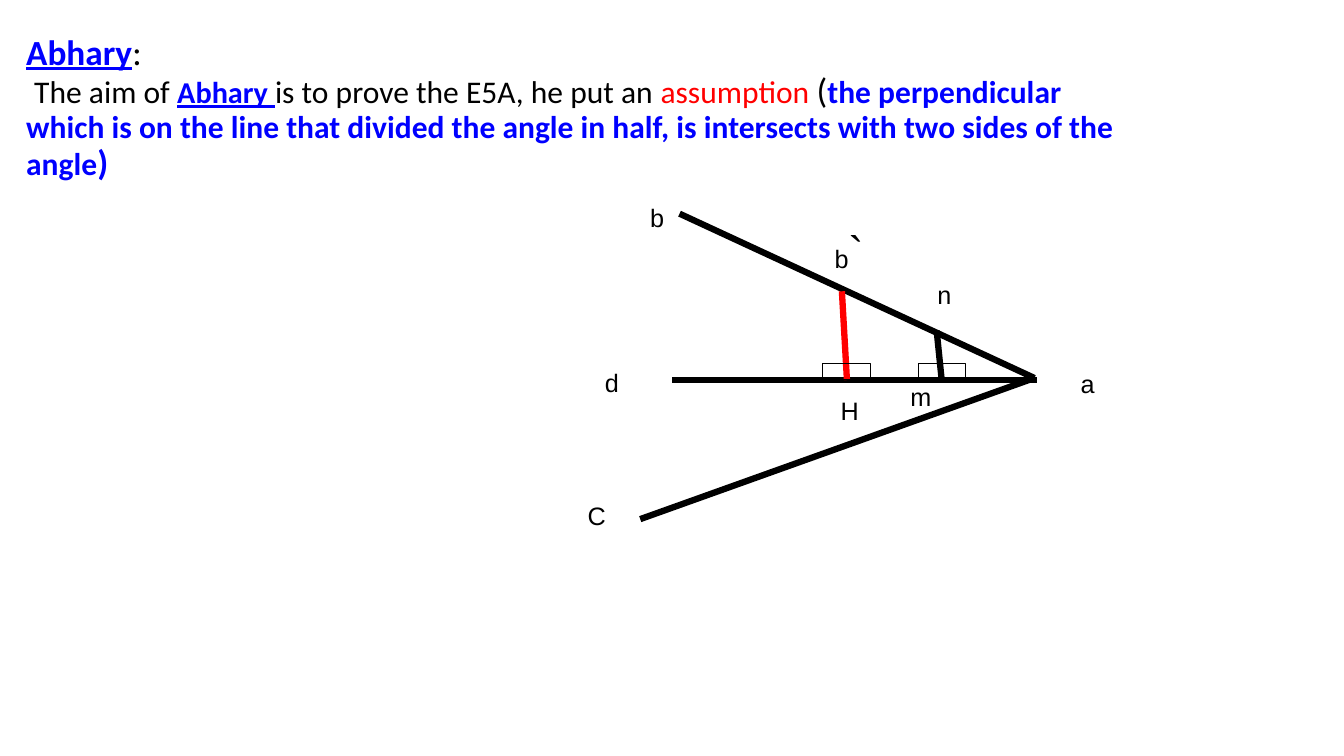
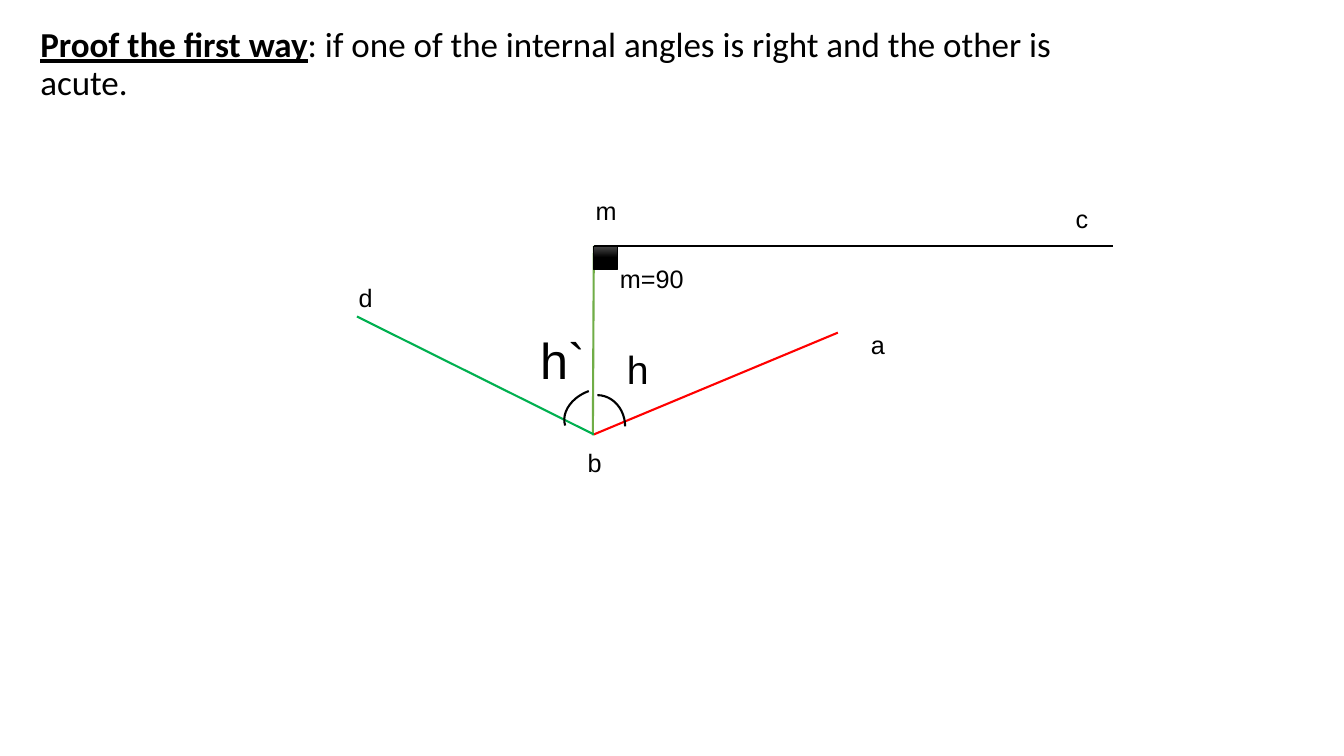
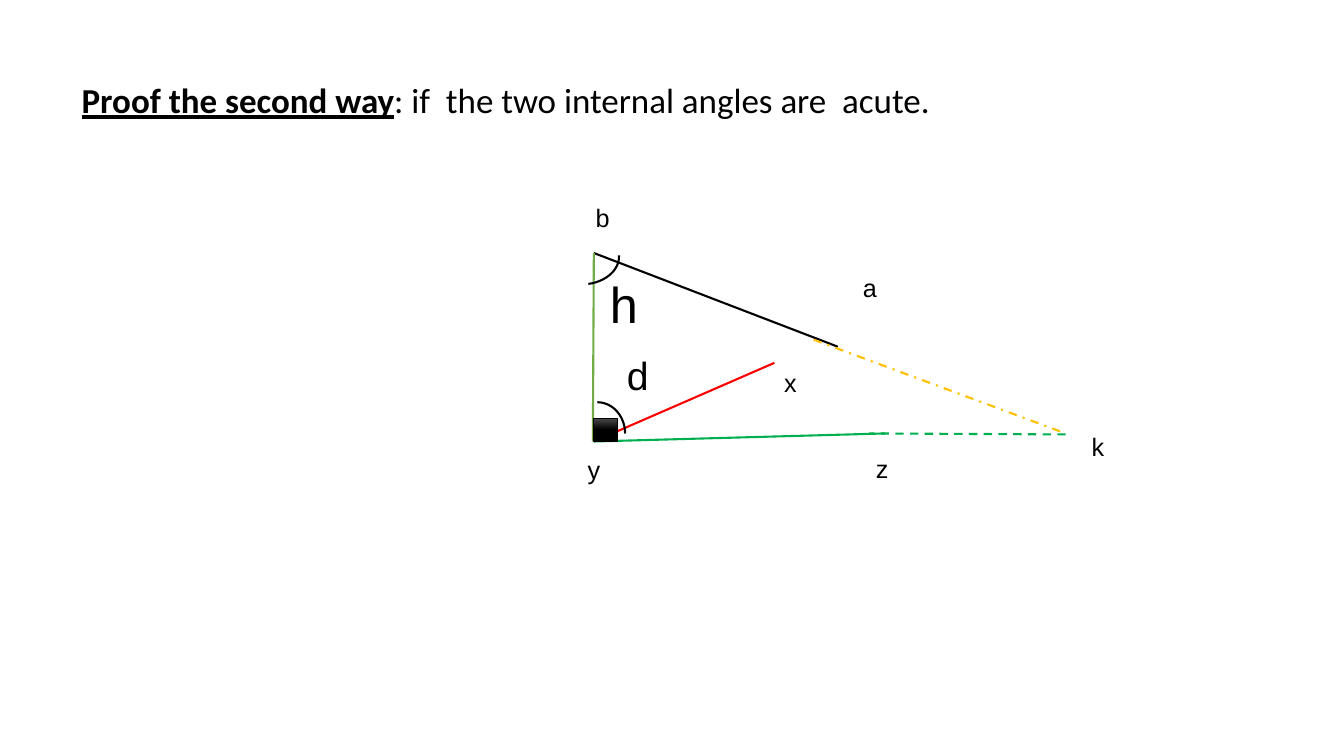
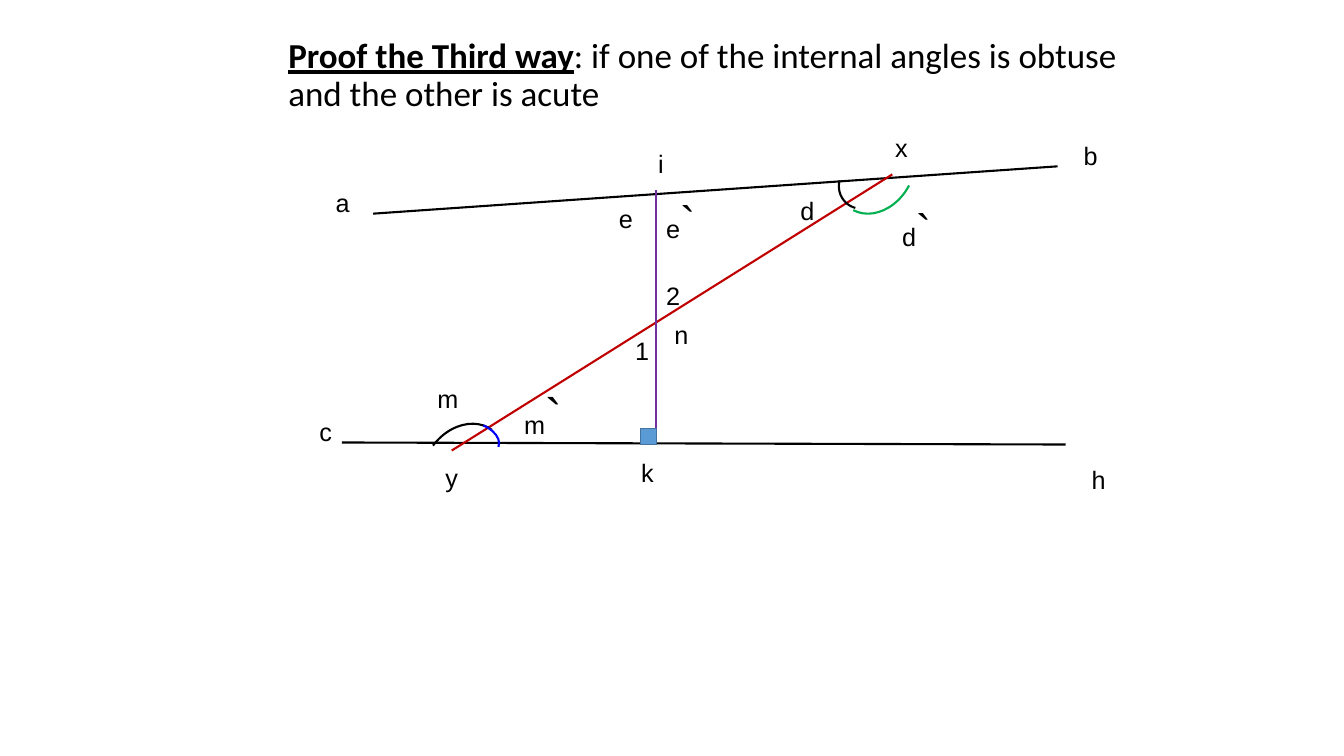
from dataclasses import dataclass

from lxml import etree
from pptx import Presentation
from pptx import util as u
from pptx.dml.color import RGBColor
from pptx.enum import dml, shapes, text
from pptx.oxml.ns import qn


@dataclass(frozen=True)
class Theme:
    title_font: str = "Calibri"
    label_font: str = "Arial"
    title: float = 25
    lead: float = 25.2
    body: float = 22.5
    name: float = 21.6
    label: float = 18
    angle: float = 28
    prime: float = 32
    large: float = 36
    thin: float = 1.5
    thick: float = 4.5
    black: str = "000000"
    charcoal: str = "4B4B4B"
    blue: str = "0000FF"
    red: str = "FF0000"
    dark_red: str = "C00000"
    green: str = "00B050"
    olive: str = "70AD47"
    amber: str = "FFC000"
    purple: str = "7030A0"
    sky: str = "5B9BD5"
    steel: str = "43739E"


T = Theme()
GLYPH_EM = {"m": 0.83, "C": 0.72, "H": 0.72, "=": 0.58, "`": 0.33, "i": 0.22,
            "c": 0.5, "k": 0.5, "x": 0.5, "y": 0.5, "z": 0.5}


def rgb(color):
    return RGBColor.from_string(color)


def add_run(p, content, size, font, color=T.black, bold=False, underline=False):
    r = p.add_run()
    r.text = content
    f = r.font
    f.name, f.size, f.bold, f.underline = font, u.Pt(size), bold, underline
    f.color.rgb = rgb(color)


def add_slide(prs, box, lines, space_below=0.05):
    s = prs.slides.add_slide(prs.slide_layouts[5])
    sp = s.shapes.title
    sp.left, sp.top, sp.width, sp.height = map(u.Inches, box)
    tf = sp.text_frame
    tf.word_wrap = True
    tf.auto_size = text.MSO_AUTO_SIZE.NONE
    tf.vertical_anchor = text.MSO_ANCHOR.MIDDLE
    tf.margin_bottom = u.Inches(space_below)
    p = tf.paragraphs[0]
    p.alignment = text.PP_ALIGN.LEFT
    p.line_spacing = 0.9
    for i, runs in enumerate(lines):
        if i:
            p.add_line_break()
        for content, size, color, bold, underline in runs:
            add_run(p, content, size, T.title_font, color, bold, underline)
    return s


def add_proof_slide(prs, box, heading, statement, space_below=0.05):
    return add_slide(prs, box, [[(heading, T.title, T.black, True, True),
                                 (statement, T.title, T.black, False, False)]], space_below)


def add_line(s, start, end, color=T.black, width=T.thin, dash=None):
    c = s.shapes.add_connector(shapes.MSO_CONNECTOR.STRAIGHT,
                               *map(u.Inches, (*start, *end)))
    c.line.color.rgb = rgb(color)
    c.line.width = u.Pt(width)
    if dash:
        c.line.dash_style = dash
    etree.SubElement(c._element.spPr, qn("a:effectLst"))


def add_outline(s, kind, box, color, width):
    sp = s.shapes.add_shape(kind, *map(u.Inches, box))
    sp.shadow.inherit = False
    sp.fill.background()
    sp.line.color.rgb = rgb(color)
    sp.line.width = u.Pt(width)
    return sp


def add_arc(s, box, rotation=0, color=T.black, sweep=None):
    sp = add_outline(s, shapes.MSO_SHAPE.ARC, box, color, T.thin)
    sp.rotation = rotation
    for i, value in enumerate(sweep or ()):
        sp.adjustments[i] = value


def add_box(s, box, color=T.black, width=0.75):
    return add_outline(s, shapes.MSO_SHAPE.RECTANGLE, box, color, width)


def add_dark_corner(s, x, y):
    fill = add_box(s, (x, y, 0.23, 0.23), width=0.5).fill
    fill.gradient()
    fill.gradient_angle = 270
    for stop, color, position in zip(fill.gradient_stops, (T.charcoal, T.black), (0, 0.5)):
        stop.color.rgb = rgb(color)
        stop.position = position


def add_label(s, x, y, *runs):
    em_width = sum(size * GLYPH_EM.get(ch, 0.56) for content, size in runs for ch in content)
    height = max(size for _, size in runs) * 1.2 / 72 + 0.1
    sp = s.shapes.add_textbox(*map(u.Inches, (x, y, em_width / 72 + 0.2, height)))
    tf = sp.text_frame
    tf.word_wrap = False
    tf.auto_size = text.MSO_AUTO_SIZE.SHAPE_TO_FIT_TEXT
    for content, size in runs:
        add_run(tf.paragraphs[0], content, size, T.label_font)


def add_labels(s, points):
    for name, x, y in points:
        add_label(s, x, y, (name, T.label))


def add_primed(s, name, x, y, size=T.prime):
    add_label(s, x, y, (name, T.label), ("`", size))


def build_assumption(prs):
    s = add_slide(prs, (0.16, 0.23, 11.26, 1.7), [
        [("Abhary", T.lead, T.blue, True, True),
         (": ", T.lead, T.black, False, False)],
        [(" ", T.lead, T.black, False, False),
         ("The aim of ", T.body, T.black, False, False),
         ("Abhary ", T.name, T.blue, True, True),
         ("is to prove the E5A, he put an ", T.body, T.black, False, False),
         ("assumption ", T.body, T.red, False, False),
         ("(", T.lead, T.black, False, False),
         ("the perpendicular which is on the line that divided the angle in half, "
          "is intersects with two sides of the angle", T.body, T.blue, True, False),
         (")", T.lead, T.blue, True, False)]])
    vertex = (10.26, 3.75)
    for start, end, color in (((6.67, 3.77), (10.29, 3.77), T.black),
                              ((6.74, 2.12), vertex, T.black),
                              ((8.35, 2.89), (8.4, 3.77), T.red),
                              ((9.29, 3.28), (9.34, 3.77), T.black),
                              ((6.35, 5.15), vertex, T.black)):
        add_line(s, start, end, color, T.thick)
    for x in (8.16, 9.11):
        add_box(s, (x, 3.61, 0.47, 0.16))
    add_labels(s, (("C", 5.73, 4.91), ("a", 10.62, 3.61), ("b", 6.35, 1.96),
                   ("H", 8.24, 3.87), ("m", 8.93, 3.73), ("n", 9.2, 2.72),
                   ("d", 5.9, 3.59)))
    add_primed(s, "b", 8.18, 2.17)


def build_first_way(prs):
    s = add_proof_slide(prs, (0.3, 0.16, 11.12, 1.35), "Proof the first way",
                        ": if one of the internal angles is right and the other is acute.", 0.43)
    m, b = (5.89, 2.44), (5.89, 4.31)
    add_line(s, m, (11.04, 2.44))
    add_line(s, m, (5.88, 4.32), T.olive)
    add_line(s, b, (8.31, 3.3), T.red)
    add_line(s, (3.54, 3.14), b, T.green)
    add_dark_corner(s, *m)
    add_arc(s, (5.65, 3.92, 0.55, 0.62))
    add_arc(s, (5.68, 3.77, 0.52, 0.7), 253.1, sweep=(162, 212.59))
    add_labels(s, (("a", 8.54, 3.22), ("b", 5.73, 4.39), ("c", 10.57, 1.97),
                   ("m", 5.81, 1.89), ("d", 3.46, 2.75), ("m=90", 6.05, 2.56)))
    add_label(s, 6.12, 3.38, ("h", T.angle))
    add_label(s, 5.26, 3.22, ("h`", T.large))


def build_second_way(prs):
    s = add_proof_slide(prs, (0.71, -0.2, 8.66, 2.81), "Proof the second way",
                        ": if  the two internal angles are  acute.", 0.43)
    b, y = (5.89, 2.51), (5.89, 4.38)
    add_line(s, b, (8.31, 3.44))
    add_line(s, b, (5.88, 4.38), T.olive)
    add_line(s, y, (7.68, 3.6), T.red)
    add_line(s, (8.78, 4.3), y, T.green)
    add_dark_corner(s, 5.89, 4.15)
    add_arc(s, (5.65, 3.99, 0.55, 0.62))
    add_arc(s, (5.53, 2.21, 0.52, 0.7), 85.7, sweep=(162, 212.59))
    add_line(s, (8.07, 3.37), (10.57, 4.3), T.amber, dash=dml.MSO_LINE.DASH_DOT)
    add_line(s, (10.57, 4.31), (8.62, 4.3), T.green, dash=dml.MSO_LINE.DASH)
    add_labels(s, (("x", 7.68, 3.59), ("y", 5.73, 4.46), ("a", 8.46, 2.65),
                   ("b", 5.81, 1.96), ("z", 8.59, 4.45), ("k", 10.73, 4.23)))
    add_label(s, 6.12, 3.44, ("d", T.angle))
    add_label(s, 5.95, 2.66, ("h", T.large))


def build_third_way(prs):
    s = add_proof_slide(prs, (2.76, 0.16, 8.66, 1.19), "Proof the Third way",
                        ": if one of the internal angles is obtuse and the other is acute")
    add_line(s, (3.7, 2.12), (10.49, 1.65))
    add_line(s, (3.39, 4.39), (10.57, 4.41))
    add_line(s, (4.48, 4.47), (8.85, 1.73), T.dark_red)
    add_arc(s, (4.12, 4.27, 0.95, 0.75), 306.8)
    add_arc(s, (8.32, 1.62, 0.44, 0.45), 194.6)
    add_arc(s, (4.52, 4.21, 0.44, 0.28), 22.3, T.blue)
    add_arc(s, (8.21, 1.29, 0.95, 0.75), 117.9, T.green)
    add_line(s, (6.51, 1.89), (6.51, 4.39), T.purple)
    fill = add_box(s, (6.35, 4.25, 0.16, 0.16), T.steel, 1).fill
    fill.solid()
    fill.fore_color.rgb = rgb(T.sky)
    add_labels(s, (("a", 3.23, 1.81), ("b", 10.65, 1.34), ("c", 3.07, 4.08),
                   ("h", 10.73, 4.56), ("m", 4.24, 3.75), ("d", 7.84, 1.89),
                   ("k", 6.26, 4.49), ("n", 6.59, 3.12), ("i", 6.43, 1.42),
                   ("1", 6.2, 3.28), ("2", 6.51, 2.73), ("e", 6.04, 1.97),
                   ("x", 8.78, 1.26), ("y", 4.32, 4.54)))
    add_primed(s, "d", 8.85, 1.95)
    add_primed(s, "e", 6.51, 1.87)
    add_primed(s, "m", 5.1, 3.76, T.large)


def main():
    prs = Presentation()
    prs.slide_width, prs.slide_height = u.Inches(13.33), u.Inches(7.5)
    for build in (build_assumption, build_first_way, build_second_way, build_third_way):
        build(prs)
    prs.save("out.pptx")


if __name__ == "__main__":
    main()
